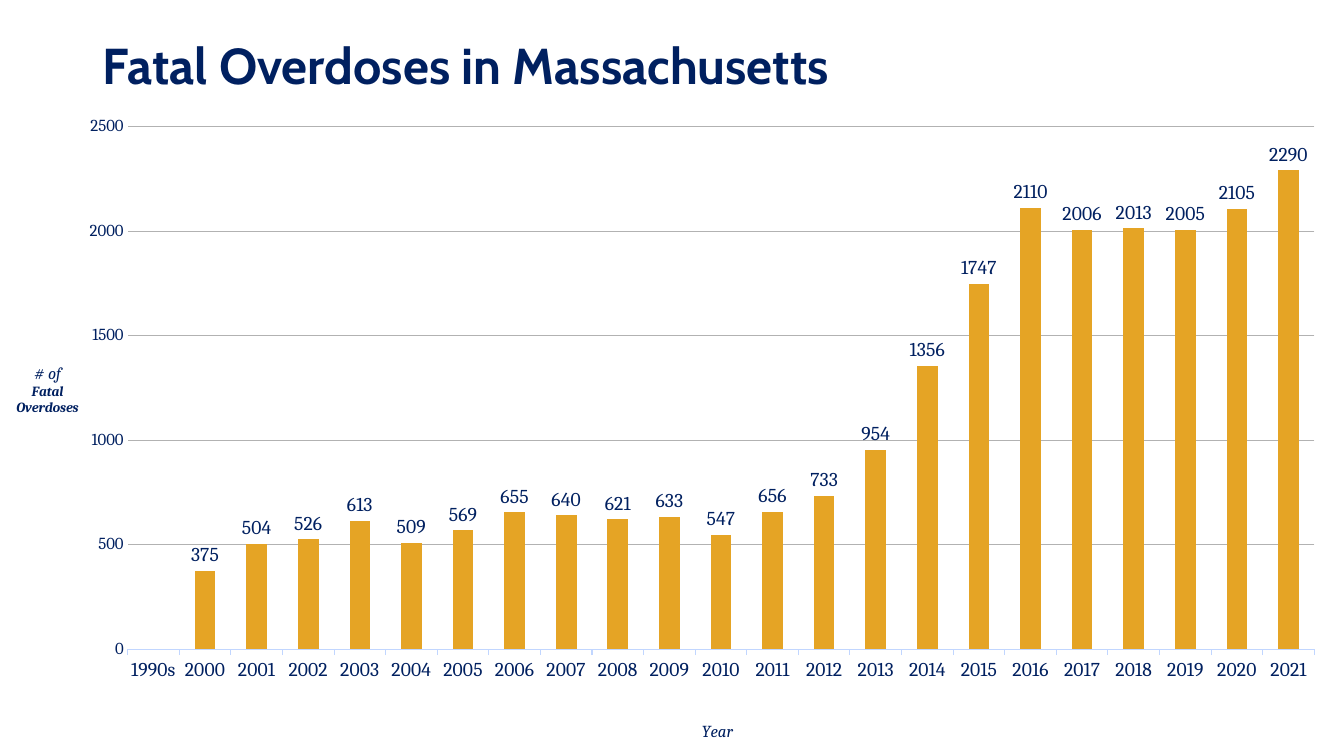
from dataclasses import dataclass

from lxml import etree
from pptx import Presentation
from pptx.chart.data import CategoryChartData
from pptx.dml.color import RGBColor
from pptx.enum.chart import XL_CHART_TYPE, XL_LABEL_POSITION, XL_TICK_MARK
from pptx.enum.text import MSO_ANCHOR
from pptx.oxml.ns import qn
from pptx.util import Pt

COLUMNS = XL_CHART_TYPE.COLUMN_CLUSTERED
OUTSIDE_END = XL_LABEL_POSITION.OUTSIDE_END
TICK_NONE, TICK_OUT = XL_TICK_MARK.NONE, XL_TICK_MARK.OUTSIDE
BOTTOM = MSO_ANCHOR.BOTTOM

EMU_PER_PX = 914400 / 100.8
SLIDE_W, SLIDE_H = 1344, 756


@dataclass(frozen=True)
class Theme:
    navy: str = "002060"
    gold: str = "E5A425"
    axis: str = "C1D6FF"
    grid: str = "B2B2B2"
    heading_font: str = "Cabin"
    body_font: str = "Cambria"
    heading: int = 36
    label: int = 14
    scale: int = 12
    small: int = 10
    line: float = 0.75


THEME = Theme()

YEARS = ["1990s"] + [str(year) for year in range(2000, 2022)]
DEATHS = [None, 375, 504, 526, 613, 509, 569, 655, 640, 621, 633, 547, 656,
          733, 954, 1356, 1747, 2110, 2006, 2013, 2005, 2105, 2290]


def px(n):
    return round(n * EMU_PER_PX)


def style_font(font, size, name=THEME.body_font, bold=False, italic=False):
    font.name, font.size = name, Pt(size)
    font.bold, font.italic = bold, italic
    font.color.rgb = RGBColor.from_string(THEME.navy)


def add_text(p, text, **fmt):
    r = p.add_run()
    r.text = text
    style_font(r.font, **fmt)


def style_line(line, color):
    line.color.rgb = RGBColor.from_string(color)
    line.width = Pt(THEME.line)


def set_layout(layout, **values):
    """Fill a chart layout element with manual fractions of the chart."""
    for child in list(layout):
        layout.remove(child)
    manual = etree.SubElement(layout, qn("c:manualLayout"))
    for tag, value in values.items():
        etree.SubElement(manual, qn("c:" + tag)).set("val", str(value))


def add_axis_title(axis, lines, x, y):
    """Write horizontal title lines given as (text, size, bold)."""
    title = axis.axis_title
    tf = title.text_frame
    for i, (text, size, bold) in enumerate(lines):
        p = tf.add_paragraph() if i else tf.paragraphs[0]
        add_text(p, text, size=size, bold=bold, italic=True)
    body = title._element.find(".//" + qn("a:bodyPr"))
    body.set("rot", "0")
    body.set("vert", "horz")
    layout = title._element.find(qn("c:layout"))
    if layout is None:
        layout = etree.Element(qn("c:layout"))
        title._element.find(qn("c:tx")).addnext(layout)
    set_layout(layout, xMode="edge", yMode="edge", x=x, y=y)


def add_heading(s, x, y, w, h):
    tf = s.shapes.add_textbox(px(x), px(y), px(w), px(h)).text_frame
    tf.word_wrap = True
    tf.vertical_anchor = BOTTOM
    p = tf.paragraphs[0]
    p.line_spacing = 0.9
    add_text(p, "Fatal Overdoses in Massachusetts", size=THEME.heading,
             name=THEME.heading_font, bold=True)


def add_overdose_chart(s, x, y, w, h):
    data = CategoryChartData()
    data.categories = YEARS
    data.add_series("Series 1", DEATHS)
    chart = s.shapes.add_chart(COLUMNS, px(x), px(y), px(w), px(h), data).chart
    chart.has_legend = False
    chart.has_title = False
    style_font(chart.font, THEME.small)

    # Plot area
    area = chart._chartSpace.find(".//" + qn("c:plotArea"))
    layout = area.find(qn("c:layout"))
    if layout is None:
        layout = etree.Element(qn("c:layout"))
        area.insert(0, layout)
    set_layout(layout, layoutTarget="inner", xMode="edge", yMode="edge",
               x=0.095, y=0.015, w=0.883, h=0.818)

    # Columns and their values
    plot = chart.plots[0]
    plot.gap_width = 150
    plot.vary_by_categories = False
    series = plot.series[0]
    series.format.fill.solid()
    series.format.fill.fore_color.rgb = RGBColor.from_string(THEME.gold)
    labels = series.data_labels
    labels.show_value = True
    labels.position = OUTSIDE_END
    style_font(labels.font, THEME.label)

    # Year axis
    years = chart.category_axis
    years.major_tick_mark = TICK_OUT
    style_font(years.tick_labels.font, THEME.label)
    style_line(years.format.line, THEME.axis)
    add_axis_title(years, [("Year", THEME.scale, False)], x=0.52, y=0.94)

    # Count axis
    counts = chart.value_axis
    counts.minimum_scale, counts.maximum_scale = 0, 2500
    counts.major_unit = 500
    counts.major_tick_mark = TICK_NONE
    counts.format.line.fill.background()
    style_font(counts.tick_labels.font, THEME.scale)
    style_line(counts.major_gridlines.format.line, THEME.grid)
    add_axis_title(counts, [("# of", THEME.scale, False),
                            ("Fatal", THEME.small, True),
                            ("Overdoses", THEME.small, True)], x=0.01, y=0.38)


def main():
    prs = Presentation()
    prs.slide_width, prs.slide_height = px(SLIDE_W), px(SLIDE_H)
    s = prs.slides.add_slide(prs.slide_layouts[6])
    add_overdose_chart(s, 0, 117, SLIDE_W, 639)
    add_heading(s, 93, 15, 1150, 85)
    prs.save("out.pptx")


if __name__ == "__main__":
    main()
